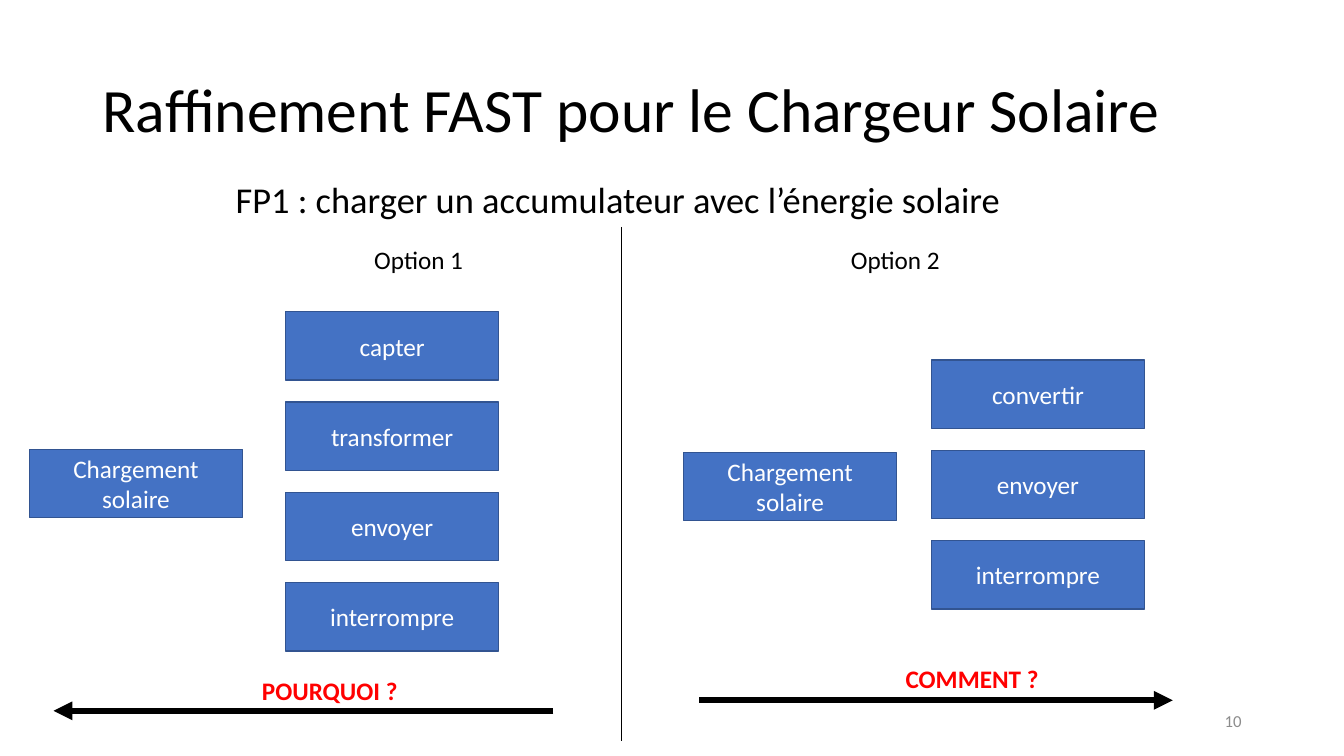
from lxml import etree
from pptx import Presentation
from pptx import util as u
from pptx.dml.color import RGBColor
from pptx.enum import shapes, text
from pptx.oxml import ns

PX = 9525
SLIDE_SIZE = 1280, 720
FUNCTION_W, FUNCTION_H, FUNCTION_STEP = 203, 65, 86
LABEL_H = 38
BLACK, RED, WHITE, GREY = "000000", "FF0000", "FFFFFF", "8C8C8C"
BLUE, DARK_BLUE = "4472C4", "325491"

# Positions inside each panel are relative to its box.
OPTIONS = [
    dict(box=(0, 216, 592, 490), heading="Option 1", heading_at=(347, 12),
         root_at=(28, 212), functions_at=(272, 81),
         functions=["capter", "transformer", "envoyer", "interrompre"],
         question="POURQUOI ?", question_at=(240, 422, 150),
         arrow=(527, 51, 461)),
    dict(box=(592, 216, 688, 490), heading="Option 2", heading_at=(209, 12),
         root_at=(59, 215), functions_at=(295, 127),
         functions=["convertir", "envoyer", "interrompre"],
         question="COMMENT ?", question_at=(261, 411, 147),
         arrow=(74, 525, 451)),
]


def px(*lengths):
    return [u.Emu(length * PX) for length in lengths]


def rgb(value):
    return RGBColor.from_string(value)


def write(frame, words, size, color, align=text.PP_ALIGN.LEFT, **frame_format):
    """Fill a text frame; frame_format overrides its attributes, bold its font."""
    font_format = dict(name="Calibri", size=u.Pt(size),
                       bold=frame_format.pop("bold", False))
    frame.text = words
    for name, value in frame_format.items():
        setattr(frame, name, value)
    for paragraph in frame.paragraphs:
        paragraph.alignment = align
        for run in paragraph.runs:
            run.font.color.rgb = rgb(color)
            for name, value in font_format.items():
                setattr(run.font, name, value)


def add_label(slide, box, words, size=18, color=BLACK, bold=False):
    label = slide.shapes.add_textbox(*px(*box))
    write(label.text_frame, words, size, color, bold=bold, word_wrap=False,
          auto_size=text.MSO_AUTO_SIZE.SHAPE_TO_FIT_TEXT)


def add_function(slide, left, top, words):
    function = slide.shapes.add_shape(
        shapes.MSO_SHAPE.RECTANGLE, *px(left, top, FUNCTION_W, FUNCTION_H))
    function.shadow.inherit = False
    function.fill.solid()
    function.fill.fore_color.rgb = rgb(BLUE)
    function.line.color.rgb = rgb(DARK_BLUE)
    function.line.width = u.Pt(1)
    write(function.text_frame, words, 18, WHITE, text.PP_ALIGN.CENTER,
          word_wrap=True, vertical_anchor=text.MSO_ANCHOR.MIDDLE)


def add_line(slide, start, end, width, arrow=False):
    line = slide.shapes.add_connector(
        shapes.MSO_CONNECTOR.STRAIGHT, *px(*start, *end))
    line.line.color.rgb = rgb(BLACK)
    line.line.width = u.Pt(width)
    if arrow:
        etree.SubElement(line.line._get_or_add_ln(), ns.qn("a:tailEnd"),
                         type="triangle")
    etree.SubElement(line._element.spPr, ns.qn("a:effectLst"))


def add_header(slide, box):
    left, top, width, height = box
    title = slide.shapes.title
    title.left, title.top, title.width, title.height = px(
        left, top, width, height)
    write(title.text_frame, "Raffinement FAST pour le Chargeur Solaire", 44,
          BLACK, word_wrap=True, vertical_anchor=text.MSO_ANCHOR.MIDDLE)
    title.text_frame.paragraphs[0].line_spacing = 0.9
    add_label(slide, (left + 127, top + 126, 755, 52),
              "FP1 : charger un accumulateur avec l’énergie solaire", 26)


def add_option(slide, box, heading, heading_at, root_at, functions_at,
               functions, question, question_at, arrow):
    """Place one option: its root, its column of functions and its arrow."""
    left, top = box[:2]
    add_label(slide, (left + heading_at[0], top + heading_at[1], 105, LABEL_H),
              heading)
    for row, function in enumerate(functions):
        add_function(slide, left + functions_at[0],
                     top + functions_at[1] + row * FUNCTION_STEP, function)
    add_function(slide, left + root_at[0], top + root_at[1],
                 "Chargement\vsolaire")
    start, end, arrow_y = arrow
    add_line(slide, (left + start, top + arrow_y), (left + end, top + arrow_y),
             4.5, arrow=True)
    question_x, question_y, question_w = question_at
    add_label(slide, (left + question_x, top + question_y, question_w, LABEL_H),
              question, color=RED, bold=True)


def add_page_number(slide, box):
    number = slide.shapes.add_textbox(*px(*box))
    write(number.text_frame, "10", 12, GREY, text.PP_ALIGN.RIGHT,
          word_wrap=True, vertical_anchor=text.MSO_ANCHOR.MIDDLE)


def main():
    deck = Presentation()
    deck.slide_width, deck.slide_height = px(*SLIDE_SIZE)
    slide = deck.slides.add_slide(deck.slide_layouts.get_by_name("Title Only"))
    add_header(slide, (88, 38, 1104, 139))
    add_line(slide, (592, 216), (592, 706), 1)
    add_page_number(slide, (904, 667, 288, LABEL_H))
    for option in OPTIONS:
        add_option(slide, **option)
    deck.save("out.pptx")


if __name__ == "__main__":
    main()
